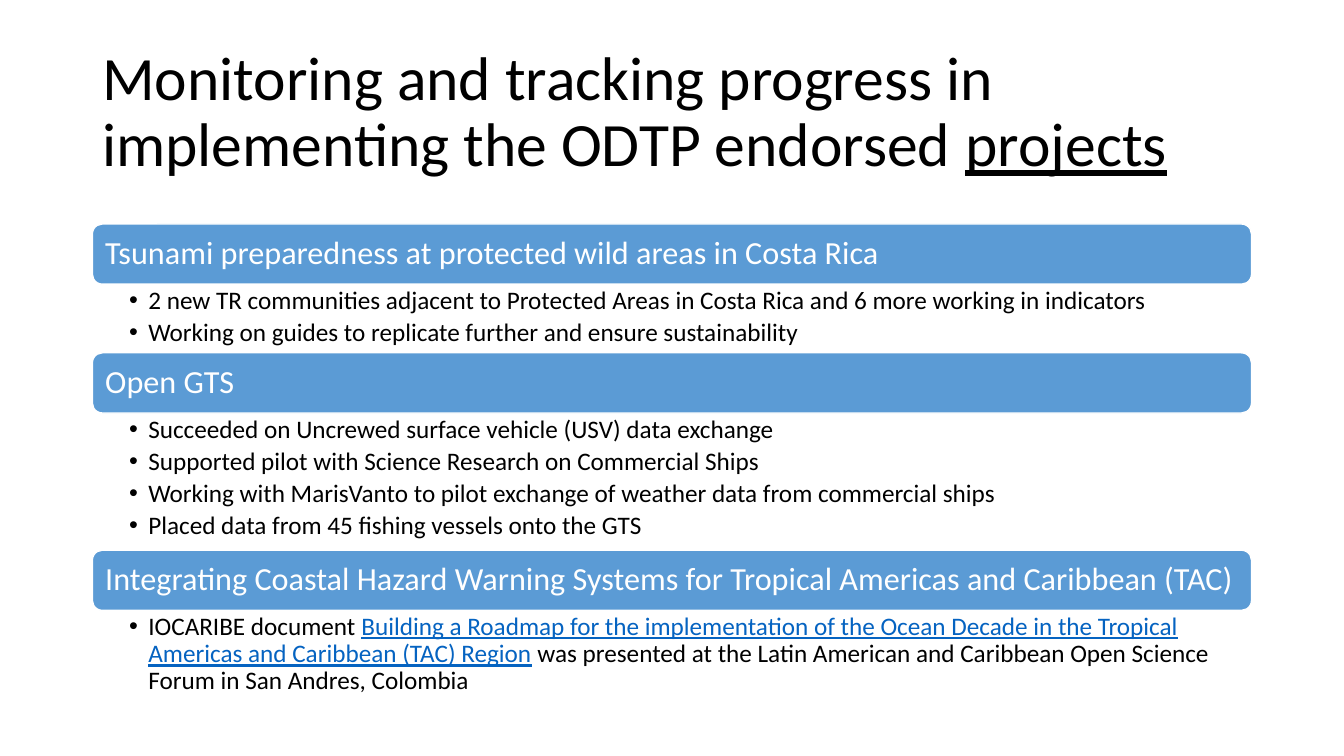
from lxml import etree
from pptx import Presentation
from pptx.dml.color import RGBColor
from pptx.enum.shapes import MSO_SHAPE
from pptx.enum.text import MSO_ANCHOR, PP_ALIGN
from pptx.oxml.ns import qn
from pptx.util import Pt

ROUNDED = MSO_SHAPE.ROUNDED_RECTANGLE
MIDDLE, TOP = MSO_ANCHOR.MIDDLE, MSO_ANCHOR.TOP
LEFT = PP_ALIGN.LEFT

FONT = "Calibri"
BLACK, WHITE, BLUE, LINK = "000000", "FFFFFF", "5B9BD5", "0563C1"
MARGIN, CONTENT_WIDTH = 66, 828
SECTIONS_TOP, BAR_HEIGHT = 160, 43
BULLET_INDENT = 13.7

TITLE = [("Monitoring and tracking progress in implementing the ODTP endorsed ", {}),
         ("projects", {"underline": True})]

# Heading, height of the bullet area, bullets as lists of (text, format) runs
SECTIONS = [
    ("Tsunami preparedness at protected wild areas in Costa Rica", 49, [
        [("2 new TR communities adjacent to Protected Areas in Costa Rica "
          "and 6 more working in indicators", {})],
        [("Working on guides to replicate further and ensure sustainability", {})],
    ]),
    ("Open GTS", 98, [
        [("Succeeded on Uncrewed surface vehicle (USV) data exchange", {})],
        [("Supported pilot with Science Research on Commercial Ships", {})],
        [("Working with MarisVanto to pilot exchange of weather data from commercial ships", {})],
        [("Placed data from 45 fishing vessels onto the GTS", {})],
    ]),
    ("Integrating Coastal Hazard Warning Systems for Tropical Americas and Caribbean (TAC)", 65.5, [
        [("IOCARIBE document ", {}),
         ("Building a Roadmap for the implementation of the Ocean Decade in the Tropical "
          "Americas and Caribbean (TAC) Region", {"color": LINK, "underline": True}),
         (" was presented at the Latin American and Caribbean Open Science Forum "
          "in San Andres, Colombia", {})],
    ]),
]


def rgb(hex_color):
    return RGBColor.from_string(hex_color)


def set_frame(frame, anchor, left, top, right, bottom):
    settings = {"word_wrap": True, "vertical_anchor": anchor,
                "margin_left": Pt(left), "margin_top": Pt(top),
                "margin_right": Pt(right), "margin_bottom": Pt(bottom)}
    for name, value in settings.items():
        setattr(frame, name, value)


def write_runs(paragraph, runs, size, color):
    """Fill a paragraph with (text, format) runs that share a size and base colour."""
    paragraph.alignment = LEFT
    paragraph.line_spacing = 0.9
    for text, run_format in runs:
        run = paragraph.add_run()
        run.text = text
        values = {"name": FONT, "size": Pt(size), "color": color, **run_format}
        run.font.color.rgb = rgb(values.pop("color"))
        for name, value in values.items():
            setattr(run.font, name, value)


def add_bullet(paragraph):
    properties = paragraph._p.get_or_add_pPr()
    properties.set("marL", str(Pt(BULLET_INDENT)))
    properties.set("indent", str(-Pt(BULLET_INDENT)))
    etree.SubElement(properties, qn("a:buFont")).set("typeface", "Arial")
    etree.SubElement(properties, qn("a:buChar")).set("char", "•")


def add_title(slide, left, top, width, height):
    title = slide.shapes.add_textbox(Pt(left), Pt(top), Pt(width), Pt(height))
    set_frame(title.text_frame, MIDDLE, 7.2, 3.6, 7.2, 3.6)
    write_runs(title.text_frame.paragraphs[0], TITLE, 44, BLACK)


def add_heading_bar(slide, heading, left, top, width, height):
    bar = slide.shapes.add_shape(ROUNDED, Pt(left), Pt(top), Pt(width), Pt(height))
    bar.shadow.inherit = False
    bar.fill.solid()
    bar.fill.fore_color.rgb = rgb(BLUE)
    bar.line.color.rgb = rgb(WHITE)
    bar.line.width = Pt(1)
    set_frame(bar.text_frame, MIDDLE, 7.2, 7.2, 7.2, 7.2)
    write_runs(bar.text_frame.paragraphs[0], [(heading, {})], 23, WHITE)


def add_bullets(slide, bullets, left, top, width, height):
    box = slide.shapes.add_textbox(Pt(left), Pt(top), Pt(width), Pt(height))
    frame = box.text_frame
    set_frame(frame, TOP, 26.3, 2.3, 13, 2.3)
    for index, runs in enumerate(bullets):
        paragraph = frame.add_paragraph() if index else frame.paragraphs[0]
        paragraph.level = 1
        write_runs(paragraph, runs, 18, BLACK)
        paragraph.space_after = Pt(3.6)
        add_bullet(paragraph)


def add_sections(slide, left, top, width):
    """Stack each heading bar on its bullets, from the top down."""
    for heading, bullets_height, bullets in SECTIONS:
        add_heading_bar(slide, heading, left, top, width, BAR_HEIGHT)
        top += BAR_HEIGHT
        add_bullets(slide, bullets, left, top, width, bullets_height)
        top += bullets_height


def main():
    presentation = Presentation()
    presentation.slide_width, presentation.slide_height = Pt(960), Pt(540)
    slide = presentation.slides.add_slide(presentation.slide_layouts[6])
    add_title(slide, MARGIN, 28.75, CONTENT_WIDTH, 104.4)
    add_sections(slide, MARGIN, SECTIONS_TOP, CONTENT_WIDTH)
    presentation.save("out.pptx")


if __name__ == "__main__":
    main()
